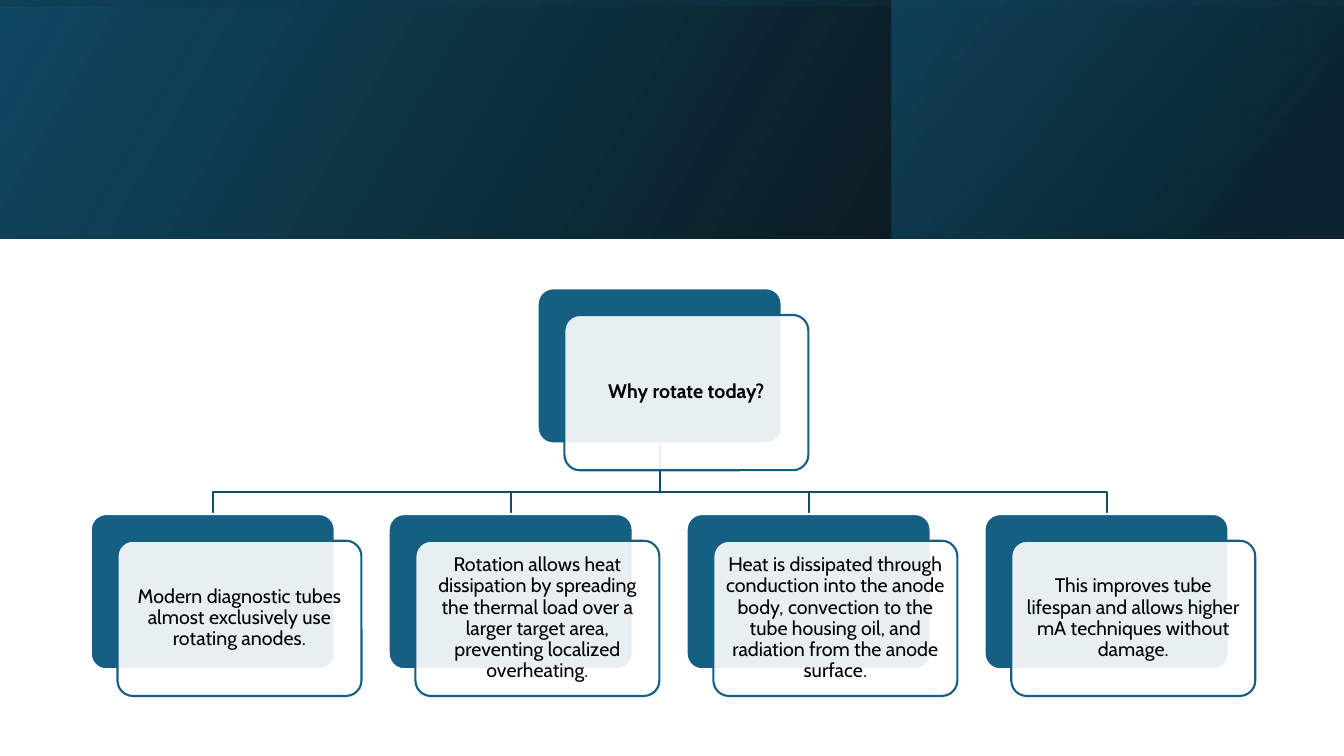
from lxml.etree import SubElement
from pptx import Presentation
from pptx.dml.color import RGBColor
from pptx.enum.shapes import MSO_SHAPE as Shape
from pptx.enum.text import MSO_ANCHOR as Anchor, PP_ALIGN as Align
from pptx.oxml.ns import qn
from pptx.util import Inches, Pt

WIDE, HIGH = 13.33, 7.5
BAND = 2.37
LEFT, TOP = 0.9, 2.86
COL, ROW = 2.955, 2.24
CARD_W, CARD_H = 2.42, 1.54
SHIFT = 0.265
ROOT = 1.5
BLUE, NAVY, BLACK, WHITE = "156082", "104862", "000000", "FFFFFF"

POINTS = [
    "Modern diagnostic tubes almost exclusively use rotating anodes.",
    "Rotation allows heat dissipation by spreading the thermal load over a "
    "larger target area, preventing localized overheating.",
    "Heat is dissipated through conduction into the anode body, convection "
    "to the tube housing oil, and radiation from the anode surface.",
    "This improves tube lifespan and allows higher mA techniques without damage.",
]


def color(code):
    return RGBColor.from_string(code)


def fade(shape, *shares):
    tones = shape._element.spPr.iter(qn("a:srgbClr"))
    for tone, share in zip(list(tones), shares):
        SubElement(tone, qn("a:alpha"), val=str(share * 1000))


def block(slide, kind, x, y, w, h):
    shape = slide.shapes.add_shape(kind, *map(Inches, (x, y, w, h)))
    shape.shadow.inherit = False
    return shape


def outline(shape, code):
    shape.line.color.rgb = color(code)
    shape.line.width = Pt(1.5)


def write(shape, text, size=14, bold=False, font="Cabin", code=BLACK):
    frame = shape.text_frame
    frame.word_wrap = True
    frame.vertical_anchor = Anchor.MIDDLE
    frame.margin_left = frame.margin_right = Inches(0.06)
    frame.margin_top = frame.margin_bottom = Inches(0.06)
    line = frame.paragraphs[0]
    line.alignment = Align.CENTER
    line.line_spacing = 0.9
    run = line.add_run()
    run.text = text
    run.font.size = Pt(size)
    run.font.bold = bold
    run.font.name = font
    run.font.color.rgb = color(code)


def band(slide, x, y, w, h, stops, angle, turn=0):
    shape = block(slide, Shape.RECTANGLE, x, y, w, h)
    shape.rotation = turn
    shape._element.spPr.xfrm.set("flipH", "1")
    shape.line.fill.background()
    shape.fill.gradient()
    shape.fill.gradient_angle = angle
    for stop, (place, code, _) in zip(shape.fill.gradient_stops, stops):
        stop.position = place
        stop.color.rgb = color(code)
    fade(shape, *(share for _, _, share in stops))


def branch(slide, col):
    start, end = (LEFT + COL * c + CARD_W / 2 for c in (ROOT, col))
    top, drop = TOP + CARD_H, TOP + ROW
    bend = top + 0.48
    path = [(start, top), (start, bend), (end, bend), (end, drop)]
    spots = [(Inches(x), Inches(y)) for x, y in path]
    build = slide.shapes.build_freeform(*spots[0])
    build.add_line_segments(spots[1:], close=False)
    shape = build.convert_to_shape()
    shape.shadow.inherit = False
    shape.fill.background()
    outline(shape, "114D68")


def card(slide, col, row, text, bold=False):
    x, y = LEFT + COL * col, TOP + ROW * row
    for step, fill, edge in ((0, BLUE, WHITE), (SHIFT, WHITE, BLUE)):
        shape = block(slide, Shape.ROUNDED_RECTANGLE,
                      x + step, y + step, CARD_W, CARD_H)
        shape.adjustments[0] = 0.1
        shape.fill.solid()
        shape.fill.fore_color.rgb = color(fill)
        if step:
            fade(shape, 90)
        outline(shape, edge)
    write(shape, text, bold=bold)


def main():
    deck = Presentation()
    deck.slide_width, deck.slide_height = Inches(WIDE), Inches(HIGH)
    slide = deck.slides.add_slide(deck.slide_layouts[6])

    band(slide, 0, 0, WIDE, BAND,
         [(0, BLACK, 96), (1, NAVY, 100)], 30)
    band(slide, 8.84, 0, WIDE - 8.84, BAND,
         [(0.19, "0B3041", 68), (1, BLUE, 48)], 40)
    mid = (WIDE - BAND) / 2
    band(slide, mid, -mid, BAND, WIDE,
         [(0.23, NAVY, 16), (0.99, BLACK, 45)], 10, turn=270)

    for col in reversed(range(len(POINTS))):
        branch(slide, col)
    card(slide, ROOT, 0, "Why rotate today?", bold=True)
    for col, text in enumerate(POINTS):
        card(slide, col, 1, text)

    deck.save("out.pptx")


if __name__ == "__main__":
    main()
